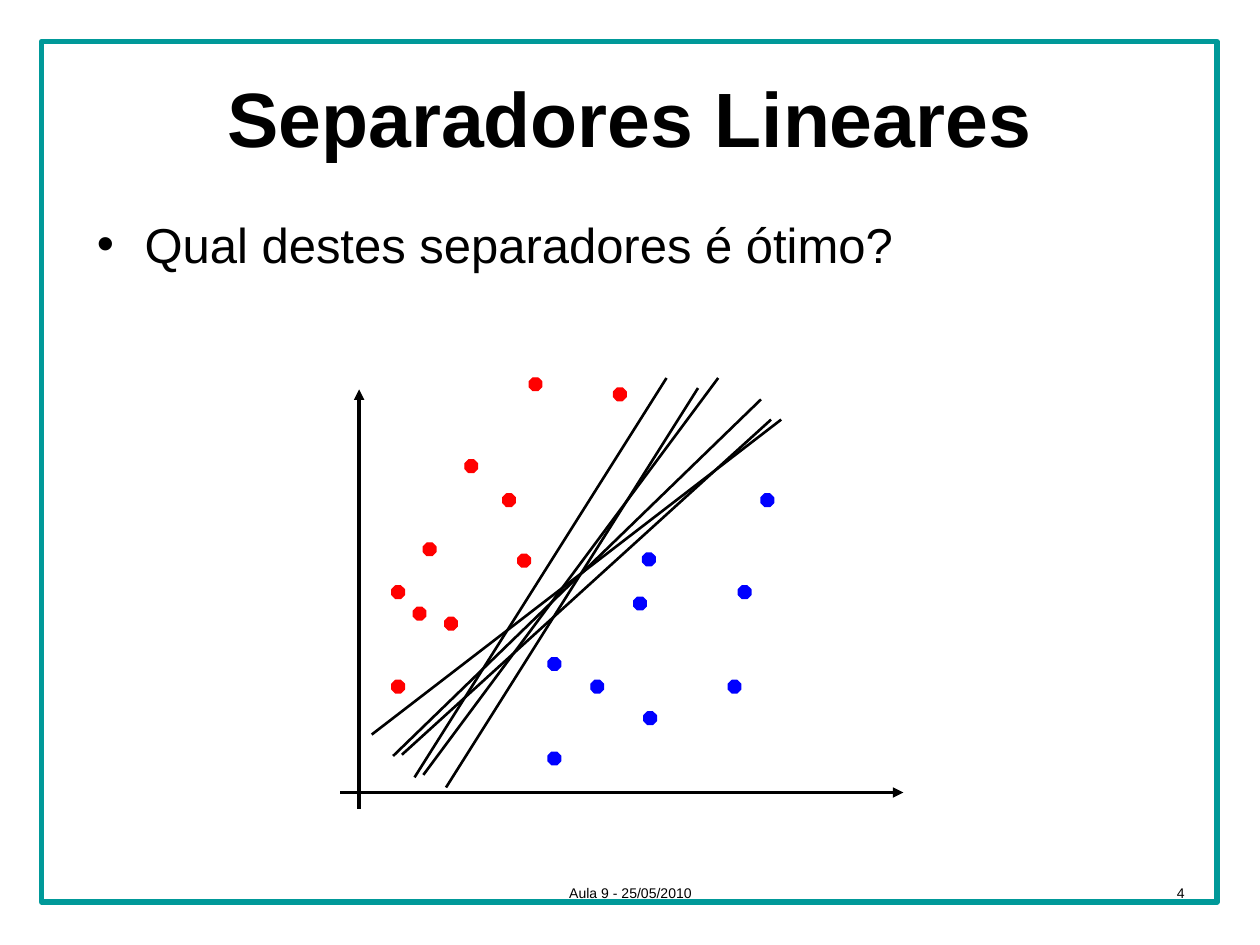
from lxml import etree
from pptx import Presentation
from pptx.dml.color import RGBColor
from pptx.enum.shapes import MSO_CONNECTOR, MSO_SHAPE
from pptx.enum.text import MSO_ANCHOR, PP_ALIGN
from pptx.oxml.ns import qn
from pptx.util import Inches, Pt

LEFT, CENTER, RIGHT = PP_ALIGN.LEFT, PP_ALIGN.CENTER, PP_ALIGN.RIGHT
TOP, MIDDLE = MSO_ANCHOR.TOP, MSO_ANCHOR.MIDDLE
STRAIGHT = MSO_CONNECTOR.STRAIGHT

TITLE = "Separadores Lineares"
QUESTION = "Qual destes separadores é ótimo?"
FOOTER = "Aula 9 - 25/05/2010"
PAGE = "4"

TEAL, BLACK, RED, BLUE = "009999", "000000", "FF0000", "0000FF"
DOT = 0.1

# Top-left corner of each point, by class colour
POINTS = {
    RED: [(3.99, 3.92), (3.36, 4.31), (3.53, 4.9), (3.11, 5.4), (3.69, 3.65),
          (3.11, 4.65), (3.28, 4.82), (4.11, 4.4), (4.2, 3), (4.87, 3.08)],
    BLUE: [(5.1, 4.39), (4.69, 5.4), (5.78, 5.4), (4.35, 5.97), (5.03, 4.74),
           (4.35, 5.22), (5.11, 5.65), (5.86, 4.65), (6.04, 3.92)],
}
AXES = [((2.85, 6.42), (2.85, 3.09)), ((2.7, 6.29), (7.17, 6.29))]
SEPARATORS = [
    ((3.19, 5.99), (6.12, 3.33)), ((3.36, 6.15), (5.7, 3)),
    ((2.95, 5.83), (6.2, 3.33)), ((3.54, 6.25), (5.54, 3.08)),
    ((3.29, 6.17), (5.29, 3)), ((3.12, 6), (6.04, 3.17)),
]


def rgb(value):
    return RGBColor.from_string(value)


def write(shape, text, size, bold=False, align=LEFT, anchor=TOP):
    frame = shape.text_frame
    frame.word_wrap = True
    frame.vertical_anchor = anchor
    paragraph = frame.paragraphs[0]
    paragraph.alignment = align
    run = paragraph.add_run()
    run.text = text
    run.font.name = "Arial"
    run.font.size = Pt(size)
    run.font.bold = bold
    run.font.color.rgb = rgb(BLACK)
    return paragraph


def add_text(slide, box, text, size, **style):
    return write(slide.shapes.add_textbox(*map(Inches, box)), text, size, **style)


def add_bullet(paragraph, indent):
    properties = paragraph._p.get_or_add_pPr()
    properties.set("marL", str(Inches(indent)))
    properties.set("indent", str(-Inches(indent)))
    etree.SubElement(properties, qn("a:buFont")).set("typeface", "Arial")
    etree.SubElement(properties, qn("a:buChar")).set("char", "•")


def add_outlined(slide, preset, box, color, width, filled=True):
    shape = slide.shapes.add_shape(preset, *map(Inches, box))
    shape.shadow.inherit = False
    if filled:
        shape.fill.solid()
        shape.fill.fore_color.rgb = rgb(color)
    else:
        shape.fill.background()
    shape.line.color.rgb = rgb(color)
    shape.line.width = Pt(width)


def add_line(slide, start, end, width, arrow=False):
    line = slide.shapes.add_connector(STRAIGHT, *map(Inches, start + end))
    line.line.color.rgb = rgb(BLACK)
    line.line.width = Pt(width)
    if arrow:
        etree.SubElement(line.line._get_or_add_ln(), qn("a:tailEnd")).set("type", "triangle")
    etree.SubElement(line._element.spPr, qn("a:effectLst"))


def main():
    deck = Presentation()
    deck.slide_width, deck.slide_height = Inches(10), Inches(7.5)
    slide = deck.slides.add_slide(deck.slide_layouts[5])

    add_outlined(slide, MSO_SHAPE.RECTANGLE, (0.33, 0.33, 9.33, 6.83), TEAL, 3, filled=False)

    title = slide.shapes.title
    title.left, title.top, title.width, title.height = map(Inches, (0.5, 0.3, 9, 1.25))
    write(title, TITLE, 44, bold=True, align=CENTER, anchor=MIDDLE)

    question = add_text(slide, (0.67, 1.65, 9, 0.7), QUESTION, 28)
    question.space_before = Pt(5.6)
    add_bullet(question, 0.38)

    for start, end in AXES:
        add_line(slide, start, end, 2, arrow=True)
    for color, corners in POINTS.items():
        for corner in corners:
            add_outlined(slide, MSO_SHAPE.OCTAGON, corner + (DOT, DOT), color, 0.75)
    for start, end in SEPARATORS:
        add_line(slide, start, end, 1.5)

    add_text(slide, (7.17, 6.83, 2.33, 0.52), PAGE, 8, align=RIGHT, anchor=MIDDLE)
    add_text(slide, (3.42, 6.83, 3.17, 0.52), FOOTER, 8, align=CENTER, anchor=MIDDLE)

    deck.save("out.pptx")


if __name__ == "__main__":
    main()
